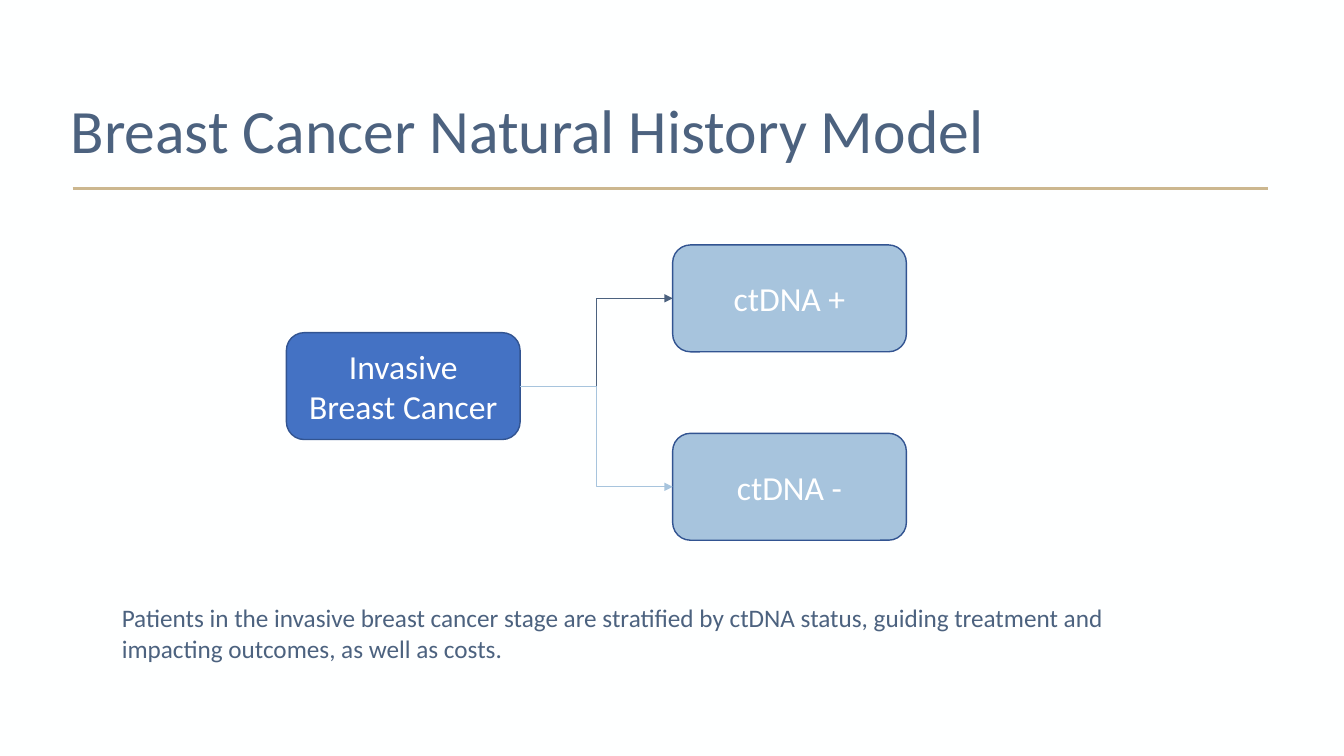
from lxml import etree
from pptx import Presentation
from pptx import util as u
from pptx.dml.color import RGBColor
from pptx.enum import shapes, text
from pptx.oxml.ns import qn

PAGE_WIDTH, PAGE_HEIGHT = u.Inches(13.33), u.Inches(7.5)
PAPER = RGBColor(0xFE, 0xFF, 0xFF)
WHITE = RGBColor(0xFF, 0xFF, 0xFF)
SLATE = RGBColor(0x4C, 0x62, 0x7F)
GOLD = RGBColor(0xCC, 0xB7, 0x8F)
BLUE = RGBColor(0x44, 0x72, 0xC4)
PALE_BLUE = RGBColor(0xA7, 0xC4, 0xDD)
OUTLINE = RGBColor(0x32, 0x54, 0x91)
FONT = "Calibri"
RIGHT_SIDE, LEFT_SIDE = 3, 1


def share(box, left, top, width, height):
    """Return the part of a box given by shares of its width and height."""
    x, y, w, h = box
    return [round(v) for v in (x + left * w, y + top * h, width * w, height * h)]


def write(shape, lines, size, color, align=text.PP_ALIGN.LEFT,
          anchor=text.MSO_ANCHOR.TOP, spacing=None):
    frame = shape.text_frame
    frame.word_wrap = True
    frame.auto_size = text.MSO_AUTO_SIZE.NONE
    frame.vertical_anchor = anchor
    for index, line in enumerate(lines):
        para = frame.add_paragraph() if index else frame.paragraphs[0]
        para.alignment = align
        para.line_spacing = spacing
        span = para.add_run()
        span.text = line
        span.font.name = FONT
        span.font.size = u.Pt(size)
        span.font.color.rgb = color


def add_line(page, kind, points, color, width):
    line = page.shapes.add_connector(kind, *points)
    line.line.color.rgb = color
    line.line.width = u.Pt(width)
    etree.SubElement(line._element.spPr, qn("a:effectLst"))
    return line


def add_state(page, box, lines, fill):
    state = page.shapes.add_shape(shapes.MSO_SHAPE.ROUNDED_RECTANGLE, *box)
    state.shadow.inherit = False
    state.fill.solid()
    state.fill.fore_color.rgb = fill
    state.line.color.rgb = OUTLINE
    state.line.width = u.Pt(1)
    write(state, lines, 24, WHITE, text.PP_ALIGN.CENTER, text.MSO_ANCHOR.MIDDLE)
    return state


def add_branch(page, start, end, color):
    """Join two states with a bent arrow from right side to left side."""
    arrow = add_line(page, shapes.MSO_CONNECTOR.ELBOW, (0, 0, 0, 0), color, 0.5)
    arrow.begin_connect(start, RIGHT_SIDE)
    arrow.end_connect(end, LEFT_SIDE)
    etree.SubElement(arrow.line._get_or_add_ln(), qn("a:tailEnd"), type="triangle")


def add_heading(page, box):
    title = page.shapes.title
    title.left, title.top, title.width, title.height = share(box, 0, 0, 0.95, 0.91)
    write(title, ["Breast Cancer Natural History Model"], 44, SLATE,
          anchor=text.MSO_ANCHOR.BOTTOM, spacing=0.9)
    left, top, width, height = box
    bottom = top + height
    add_line(page, shapes.MSO_CONNECTOR.STRAIGHT,
             (left + u.Inches(0.12), bottom, left + width, bottom), GOLD, 1.5)


def add_model(page, box):
    """Draw the first state and its two branches."""
    width, height = 0.377, 0.362
    right = 1 - width
    cancer = add_state(page, share(box, 0, 0.297, width, height),
                       ["Invasive", "Breast Cancer"], BLUE)
    outcomes = [("ctDNA +", 0, SLATE), ("ctDNA -", 1 - height, PALE_BLUE)]
    for label, top, color in outcomes:
        outcome = add_state(page, share(box, right, top, width, height),
                            [label], PALE_BLUE)
        add_branch(page, cancer, outcome, color)


def add_summary(page, box):
    write(page.shapes.add_textbox(*box), [
        "Patients in the invasive breast cancer stage are stratified by ctDNA status, "
        "guiding treatment and impacting outcomes, as well as costs."], 18, SLATE)


def main():
    deck = Presentation()
    deck.slide_width, deck.slide_height = PAGE_WIDTH, PAGE_HEIGHT
    page = deck.slides.add_slide(deck.slide_layouts.get_by_name("Title Only"))
    page.background.fill.solid()
    page.background.fill.fore_color.rgb = PAPER
    add_heading(page, [u.Inches(v) for v in (0.6, 0.09, 11.98, 1.78)])
    add_model(page, [u.Inches(v) for v in (2.84, 2.43, 6.15, 2.93)])
    add_summary(page, [u.Inches(v) for v in (1.11, 5.93, 10.54, 0.71)])
    deck.save("out.pptx")


if __name__ == "__main__":
    main()
